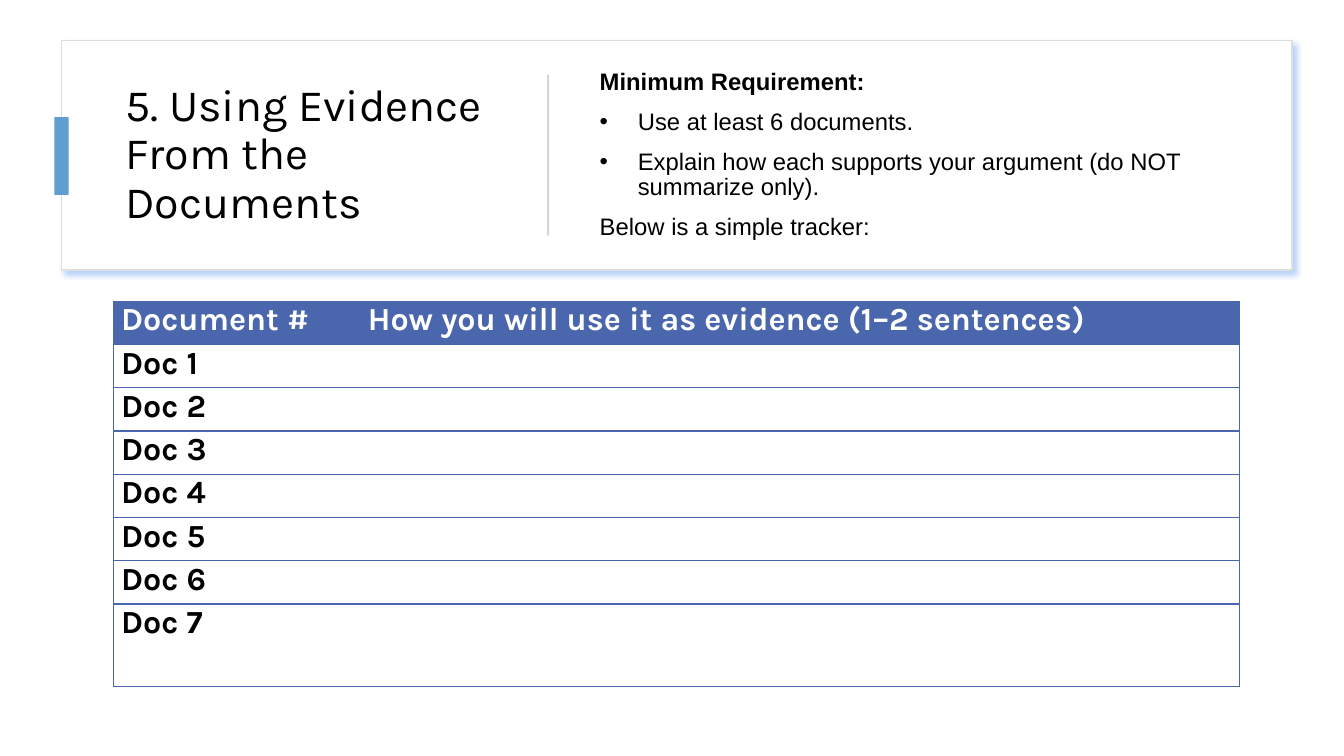
import pptx
import pptx.dml.color
import pptx.enum.shapes
import pptx.enum.text
import pptx.oxml.ns
import pptx.util
from dataclasses import dataclass
from lxml import etree

Cm = pptx.util.Cm
Pt = pptx.util.Pt
qn = pptx.oxml.ns.qn

TITLE = "5. Using Evidence From the Documents"
REQUIREMENTS = [
    ("Minimum Requirement:", "heading"),
    ("Use at least 6 documents.", "bullet"),
    ("Explain how each supports your argument (do NOT summarize only).", "bullet"),
    ("Below is a simple tracker:", "plain"),
]
HEADER = ("Document #", "How you will use it as evidence (1–2 sentences)")
TRACKER = [HEADER] + [(f"Doc {n}", "") for n in range(1, 8)]

CARD = (1.55, 1.02, 31.01, 5.79)
TITLE_BOX = (2.9, 1.63, 9.88, 4.57)
BODY_BOX = (14.86, 1.63, 16.66, 4.57)
ACCENT = (1.37, 2.95, 0.36, 1.96)
DIVIDER = (13.79, 1.88, 0.05, 4.06)
TABLE_AT = (2.87, 7.59)
COLUMNS = (6.22, 22.15)
ROWS = [1.09] * 7 + [2.08]


@dataclass(frozen=True)
class Theme:
    display: str = "Karla"
    text: str = "Arial"
    ink: str = "000000"
    paper: str = "FFFFFF"
    card_line: str = "DEDEDE"
    accent: str = "629DD1"
    divider: str = "D5D5D5"
    table: str = "4A66AC"
    shadow: str = "71A6F5"
    title_size: int = 32
    body_size: int = 17
    table_size: int = 23


theme = Theme()


def rgb(value):
    return pptx.dml.color.RGBColor.from_string(value)


def set_font(p, name, size, color, bold=False):
    p.font.name = name
    p.font.size = Pt(size)
    p.font.bold = bold
    p.font.color.rgb = rgb(color)


def place(sp, box):
    sp.left, sp.top, sp.width, sp.height = map(Cm, box)


def prepare(sp, box):
    place(sp, box)
    tf = sp.text_frame
    tf.word_wrap = True
    tf.auto_size = pptx.enum.text.MSO_AUTO_SIZE.NONE
    tf.vertical_anchor = pptx.enum.text.MSO_ANCHOR.MIDDLE
    return tf


def add_rectangle(s, box, fill, line=None):
    sp = s.shapes.add_shape(pptx.enum.shapes.MSO_SHAPE.RECTANGLE, *map(Cm, box))
    sp.shadow.inherit = False
    sp.fill.solid()
    sp.fill.fore_color.rgb = rgb(fill)
    if line:
        sp.line.color.rgb = rgb(line)
        sp.line.width = Pt(1)
    else:
        sp.line.fill.background()
    return sp


def add_card(s):
    sp = add_rectangle(s, CARD, theme.paper, theme.card_line)
    effects = sp._element.spPr.find(qn("a:effectLst"))
    shadow = etree.SubElement(effects, qn("a:outerShdw"), blurRad=str(Pt(4)),
                              dist=str(Pt(3)), dir=str(45 * 60000), algn="tl", rotWithShape="0")
    color = etree.SubElement(shadow, qn("a:srgbClr"), val=theme.shadow)
    etree.SubElement(color, qn("a:alpha"), val="50000")
    s.shapes._spTree.insert(2, sp._element)


def fill_title(sp):
    tf = prepare(sp, TITLE_BOX)
    tf.text = TITLE
    p = tf.paragraphs[0]
    p.alignment = pptx.enum.text.PP_ALIGN.LEFT
    p.line_spacing = 0.9
    set_font(p, theme.display, theme.title_size, theme.ink)


def fill_body(sp):
    tf = prepare(sp, BODY_BOX)
    tf.text = "\n".join(text for text, _ in REQUIREMENTS)
    for p, (_, kind) in zip(tf.paragraphs, REQUIREMENTS):
        p.line_spacing = 0.9
        p.space_before = Pt(10)
        set_font(p, theme.text, theme.body_size, theme.ink, kind == "heading")
        pPr = p._p.get_or_add_pPr()
        indent = Cm(0.96) if kind == "bullet" else 0
        pPr.set("marL", str(indent))
        pPr.set("indent", str(-indent))
        if kind == "bullet":
            bullet = etree.Element(qn("a:buChar"), char="•")
        else:
            bullet = etree.Element(qn("a:buNone"))
        pPr.find(qn("a:defRPr")).addprevious(bullet)


def set_borders(cell, sides):
    tcPr = cell._tc.get_or_add_tcPr()
    for side in "LRTB":
        ln = etree.SubElement(tcPr, qn(f"a:ln{side}"), w=str(Pt(1)))
        if side in sides:
            fill = etree.SubElement(ln, qn("a:solidFill"))
            etree.SubElement(fill, qn("a:srgbClr"), val=theme.table)
        else:
            etree.SubElement(ln, qn("a:noFill"))


def add_tracker(s):
    size = (sum(COLUMNS), sum(ROWS))
    table = s.shapes.add_table(len(ROWS), len(COLUMNS), *map(Cm, TABLE_AT + size)).table
    table.first_row = table.horz_banding = False
    for column, width in zip(table.columns, COLUMNS):
        column.width = Cm(width)
    for r, (values, height) in enumerate(zip(TRACKER, ROWS)):
        table.rows[r].height = Cm(height)
        for c, value in enumerate(values):
            cell = table.cell(r, c)
            set_borders(cell, "TB" + "LR"[c])
            cell.margin_left = cell.margin_right = Cm(0.18)
            cell.margin_top = cell.margin_bottom = 0
            if r == 0:
                cell.fill.solid()
                cell.fill.fore_color.rgb = rgb(theme.table)
            else:
                cell.fill.background()
            cell.text = value
            color = theme.paper if r == 0 else theme.ink
            set_font(cell.text_frame.paragraphs[0], theme.display, theme.table_size, color, True)


def main():
    prs = pptx.Presentation()
    prs.slide_width, prs.slide_height = Cm(33.87), Cm(19.05)
    s = prs.slides.add_slide(prs.slide_layouts[1])
    add_card(s)
    fill_title(s.shapes.title)
    add_rectangle(s, ACCENT, theme.accent)
    add_rectangle(s, DIVIDER, theme.divider)
    fill_body(s.placeholders[1])
    add_tracker(s)
    prs.save("out.pptx")


if __name__ == "__main__":
    main()
